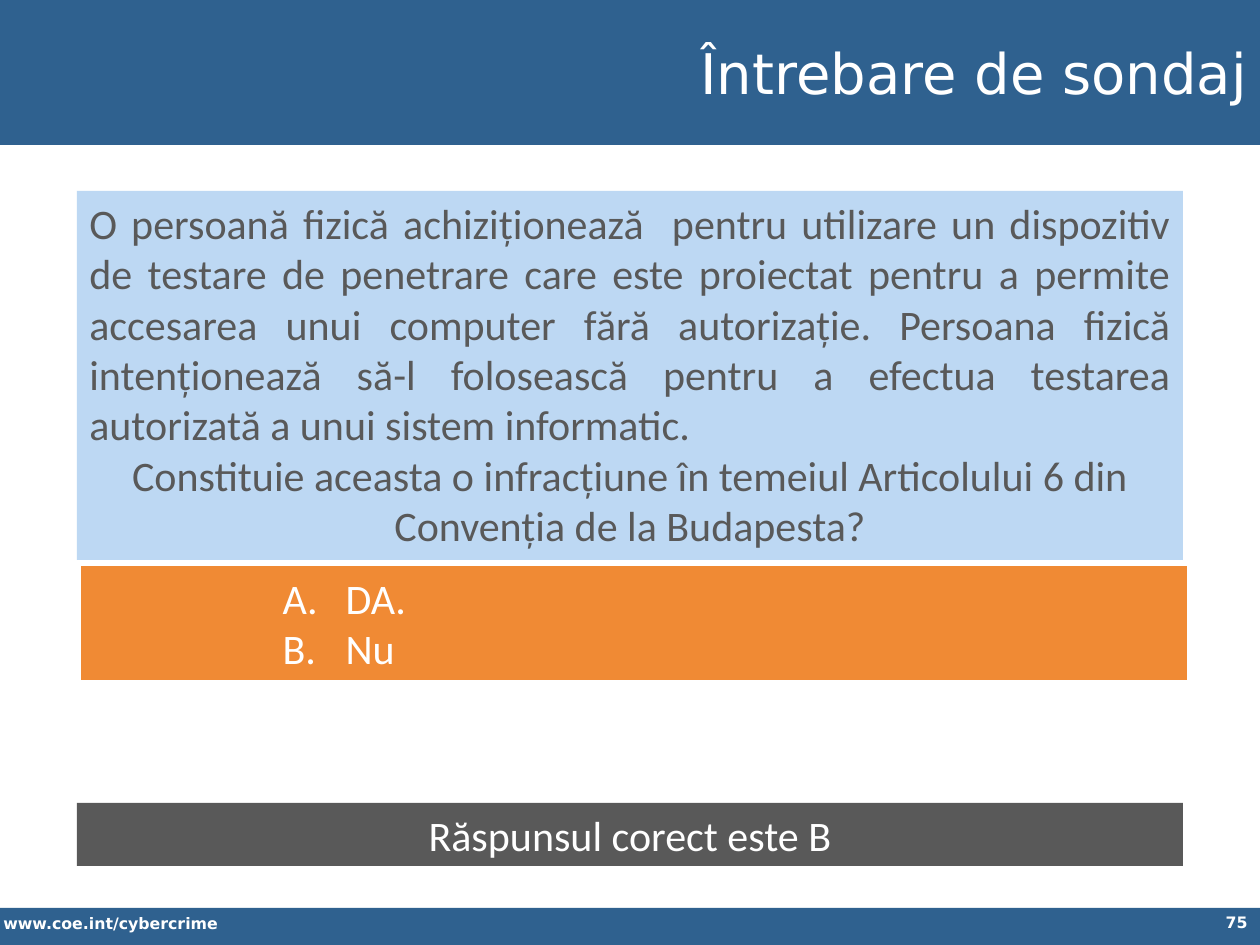
import dataclasses

import lxml.etree
import pptx
import pptx.dml.color
import pptx.enum.shapes
import pptx.enum.text
import pptx.oxml.ns
import pptx.util

PIXELS_PER_INCH = 126
BLUE, PALE, GREY, ORANGE, WHITE = "2F618F", "BDD8F3", "595959", "F08A34", "FFFFFF"
ALIGN = pptx.enum.text.PP_ALIGN
ANCHOR = pptx.enum.text.MSO_ANCHOR


@dataclasses.dataclass
class Panel:
    left: int
    top: int
    width: int
    height: int
    fill: str | None = None
    lines: tuple[str, ...] = ()
    aligns: tuple[ALIGN, ...] = ()
    font: str = "Calibri"
    size: int = 24
    colour: str = WHITE
    bold: bool = False
    anchor: ANCHOR = ANCHOR.TOP


def px(length: int) -> pptx.util.Emu:
    return pptx.util.Emu(round(length * 914400 / PIXELS_PER_INCH))


def rgb(colour: str) -> pptx.dml.color.RGBColor:
    return pptx.dml.color.RGBColor.from_string(colour)


def dress(box, panel: Panel) -> None:
    box.left, box.top = px(panel.left), px(panel.top)
    box.width, box.height = px(panel.width), px(panel.height)
    if panel.fill:
        box.fill.solid()
        box.fill.fore_color.rgb = rgb(panel.fill)
        box.line.fill.background()
    frame = box.text_frame
    frame.text = "\n".join(panel.lines)
    frame.word_wrap = True
    frame.auto_size = pptx.enum.text.MSO_AUTO_SIZE.NONE
    frame.vertical_anchor = panel.anchor
    for para, align in zip(frame.paragraphs, panel.aligns):
        para.alignment = align
        para.space_before = pptx.util.Pt(0)
        for span in para.runs:
            span.font.name = panel.font
            span.font.size = pptx.util.Pt(panel.size)
            span.font.bold = panel.bold
            span.font.color.rgb = rgb(panel.colour)


def add_panel(page, panel: Panel) -> None:
    if panel.fill:
        box = page.shapes.add_shape(pptx.enum.shapes.MSO_SHAPE.RECTANGLE, 0, 0, 0, 0)
        box.shadow.inherit = False
    else:
        box = page.shapes.add_textbox(0, 0, 0, 0)
    dress(box, panel)


def letter_answers(box) -> None:
    for para in box.text_frame.paragraphs:
        para.level = 3
        properties = para._p.get_or_add_pPr()
        properties.set("marL", str(px(252)))
        properties.set("indent", str(px(-63)))
        bullet = lxml.etree.SubElement(properties, pptx.oxml.ns.qn("a:buAutoNum"))
        bullet.set("type", "alphaUcPeriod")


QUESTION = (
    "O persoană fizică achiziționează  pentru utilizare un dispozitiv de testare de penetrare "
    "care este proiectat pentru a permite accesarea unui computer fără autorizație. "
    "Persoana fizică intenționează să-l folosească pentru a efectua testarea autorizată "
    "a unui sistem informatic.",
    "Constituie aceasta o infracțiune în temeiul Articolului 6 din Convenția de la Budapesta?",
)
PANELS = (
    Panel(0, 0, 1260, 145, BLUE),
    Panel(0, 908, 1260, 37, BLUE),
    Panel(-9, 908, 444, 32, None, ("www.coe.int/cybercrime",), (ALIGN.LEFT,),
          "DejaVu Sans", 9, bold=True),
    Panel(976, 907, 284, 38, None, ("75",), (ALIGN.RIGHT,), "DejaVu Sans", 9, bold=True),
    Panel(77, 191, 1106, 369, PALE, QUESTION, (ALIGN.JUSTIFY, ALIGN.CENTER), colour=GREY),
    Panel(77, 803, 1106, 63, GREY, ("Răspunsul corect este B",), (ALIGN.CENTER,)),
)
ANSWERS = Panel(81, 566, 1106, 114, ORANGE, ("DA.", "Nu"), (ALIGN.LEFT, ALIGN.LEFT))
TITLE = Panel(277, 9, 983, 127, BLUE, ("Întrebare de sondaj",), (ALIGN.RIGHT,),
              "DejaVu Sans", 32, anchor=ANCHOR.MIDDLE)


def main() -> None:
    deck = pptx.Presentation()
    deck.slide_width, deck.slide_height = px(1260), px(945)
    page = deck.slides.add_slide(deck.slide_layouts[1])
    title, answers = page.shapes.title, page.placeholders[1]
    for panel in PANELS:
        add_panel(page, panel)
    dress(answers, ANSWERS)
    letter_answers(answers)
    dress(title, TITLE)
    for box in (answers, title):
        page.shapes.element.append(box.element)
    deck.save("out.pptx")


if __name__ == "__main__":
    main()
